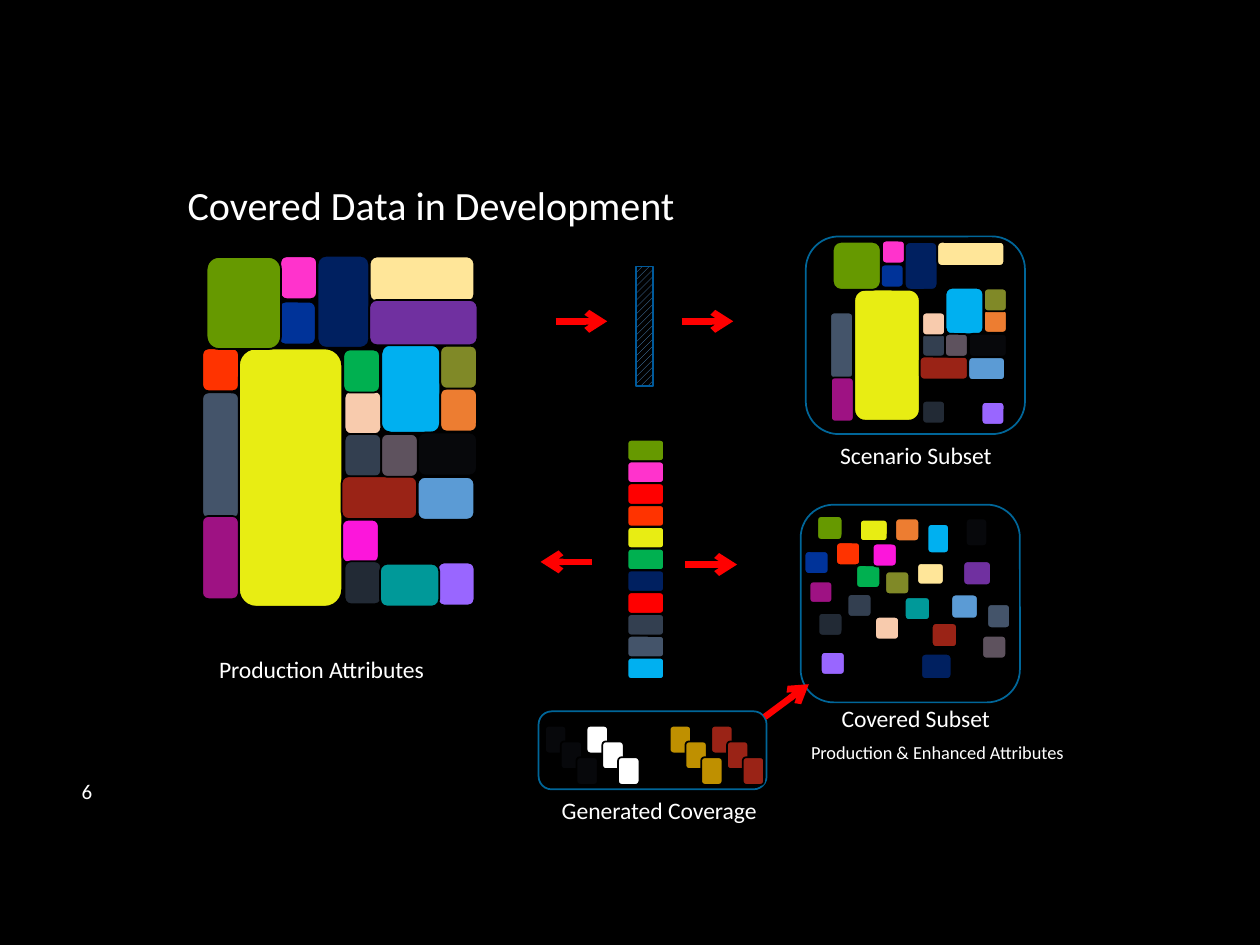
from lxml.etree import SubElement
from pptx import Presentation
from pptx.dml.color import RGBColor
from pptx.enum.dml import MSO_PATTERN_TYPE as Pattern
from pptx.enum.shapes import MSO_CONNECTOR as Connector, MSO_SHAPE as Shape
from pptx.enum.text import MSO_ANCHOR as Anchor, MSO_AUTO_SIZE as AutoSize, PP_ALIGN as Align
from pptx.oxml.ns import qn
from pptx.util import Pt

BLACK, WHITE, RED = "000000", "FFFFFF", "FF0000"
FRAME, HATCH_EDGE = "006699", "005A9B"
STEEL, SLATE, PEACH, NAVY, GREEN = "333F50", "44546A", "F8CBAD", "002060", "00B050"
YELLOW, SCARLET, BLUE, PINK, LIME = "E8ED13", "FF3300", "003399", "FF33CC", "669900"
SKY, CREAM, MAGENTA, AZURE, BRICK = "00B0F0", "FFE699", "FC16DB", "5B9BD5", "9A2316"
INK, MAUVE, ORANGE, OLIVE, PLUM = "07080B", "5E525E", "ED7D31", "808927", "9E1283"
PURPLE, LILAC, COAL, TEAL, GOLD = "7030A0", "9966FF", "222A35", "009999", "BF9000"

# Each tile: colour, left, top, then width and height where they are not the usual ones.
# Tiles stand on end, so width and height are those before the quarter turn.
PRODUCTION_SIZE = (24.5, 20.9)
PRODUCTION = [
    (STEEL, 195.1, 249.8), (SLATE, 90, 249.8, 72, 20.9), (PEACH, 195.1, 225.4),
    (NAVY, 169.9, 157.7, 52.6, 29.5), (GREEN, 194.4, 201.6),
    (YELLOW, 92.2, 243.4, 147.6, 59), (SCARLET, 113.8, 200.9),
    (BLUE, 157.7, 174.2), (PINK, 158.4, 148.3), (LIME, 113, 151.9, 52.6, 42.5),
    (SKY, 209.5, 205.2, 50.4, 33.8), (CREAM, 228.2, 129.6, 25.9, 59.8),
    (MAGENTA, 193.7, 298.8), (AZURE, 242.6, 268.6, 24.5, 32.4),
    (BRICK, 204.5, 262.8, 24.5, 43.2), (INK, 243.4, 242.6, 24.5, 33.8),
    (MAUVE, 216, 249.8), (ORANGE, 249.8, 223.9), (OLIVE, 249.8, 199.4),
    (PLUM, 102.2, 308.2, 47.5, 20.9), (PURPLE, 229, 153.4, 25.9, 61.9),
    (LILAC, 248.4, 323.3), (COAL, 195.1, 322.6), (TEAL, 221.8, 317.5, 24.5, 33.8),
]
SCENARIO_SIZE = (13, 13)
SCENARIO = [
    (STEEL, 527, 190.8), (SLATE, 462.2, 190.8, 37.4, 13), (PEACH, 527, 178.6),
    (NAVY, 512.6, 142.6, 27.4, 18.7), (YELLOW, 469.4, 184.3, 74.9, 37.4),
    (BLUE, 503.3, 151.2), (PINK, 504, 137.5), (LIME, 475.9, 138.2, 27.4, 27.4),
    (SKY, 537.8, 167, 26.6, 21.6), (CREAM, 547.9, 126, 13.7, 38.2),
    (AZURE, 557.3, 200.2, 13, 20.9), (BRICK, 532.8, 196.6, 13, 27.4),
    (INK, 558, 186.5, 13, 21.6), (MAUVE, 540, 190.8), (ORANGE, 562.3, 177.1),
    (OLIVE, 562.3, 164.9), (PLUM, 468.7, 221.8, 25.2, 13),
    (LILAC, 560.9, 229.7), (COAL, 527, 229),
]
COVERED_SIZE = (13, 13.7)
COVERED = [
    (STEEL, 484.6, 339.1), (SLATE, 563.8, 345.6, 13.7, 13), (PEACH, 500.4, 352.1),
    (NAVY, 527.8, 372.2, 14.4, 17.3), (GREEN, 489.6, 322.6),
    (YELLOW, 493.2, 295.2, 12.2, 15.8), (SCARLET, 478.1, 309.6),
    (BLUE, 460.1, 314.6), (LIME, 467.3, 294.5, 13.7, 14.4),
    (SKY, 527.8, 301.7, 16.6, 12.2), (CREAM, 525.6, 320.4, 12.2, 15.1),
    (MAGENTA, 499, 310.3), (AZURE, 544.3, 339.1, 13.7, 15.1),
    (BRICK, 532.8, 355.7, 13.7, 14.4), (INK, 550.1, 298.1, 15.8, 12.2),
    (MAUVE, 561.6, 362.9), (ORANGE, 511.9, 295.9), (OLIVE, 506.2, 326.2),
    (PLUM, 463, 331.9, 12.2, 13), (PURPLE, 551.5, 319.7, 13.7, 15.8),
    (LILAC, 469.4, 372.2), (COAL, 468, 349.9), (TEAL, 517.7, 340.6, 13, 14.4),
]
STACK = [LIME, PINK, RED, SCARLET, YELLOW, GREEN, NAVY, RED, STEEL, SLATE, SKY]
CASCADES = {0: INK, 1: WHITE, 3: GOLD, 4: BRICK}


def rgb(code):
    return RGBColor.from_string(code)


class Painter:
    font = "Calibri"
    text_color = WHITE
    caption_size = 13.5

    def __init__(self, page):
        self.page = page

    def background(self, color):
        fill = self.page.background.fill
        fill.solid()
        fill.fore_color.rgb = rgb(color)

    def block(self, kind, left, top, width, height, edge, turn):
        box = self.page.shapes.add_shape(kind, Pt(left), Pt(top), Pt(width), Pt(height))
        box.rotation = turn
        box.shadow.inherit = False
        box.line.color.rgb = rgb(edge)
        box.line.width = Pt(1)
        return box

    def tile(self, color, left, top, width, height, edge=BLACK, turn=90):
        box = self.block(Shape.ROUNDED_RECTANGLE, left, top, width, height, edge, turn)
        box.fill.solid()
        box.fill.fore_color.rgb = rgb(color)

    def tiles(self, rows, usual_size):
        for color, left, top, *size in rows:
            self.tile(color, left, top, *(size or usual_size))

    def frame(self, left, top, width, height):
        self.tile(BLACK, left, top, width, height, edge=FRAME, turn=270)

    def hatch(self, left, top, width, height):
        box = self.block(Shape.RECTANGLE, left, top, width, height, HATCH_EDGE, 270)
        box.fill.patterned()
        box.fill.pattern = Pattern.WIDE_UPWARD_DIAGONAL
        box.fill.fore_color.rgb = rgb(AZURE)
        box.fill.back_color.rgb = rgb(BLACK)

    def arrow(self, x1, y1, x2, y2):
        """Draw a red line with its arrowhead at the second point."""
        arrow = self.page.shapes.add_connector(
            Connector.STRAIGHT, Pt(x1), Pt(y1), Pt(x2), Pt(y2))
        arrow.line.color.rgb = rgb(RED)
        arrow.line.width = Pt(3.75)
        SubElement(arrow.line._get_or_add_ln(), qn("a:tailEnd"), type="arrow")
        SubElement(arrow._element.spPr, qn("a:effectLst"))

    def text(self, words, left, top, width, height, size=caption_size,
             align=Align.LEFT, anchor=Anchor.TOP, fit=AutoSize.SHAPE_TO_FIT_TEXT):
        box = self.page.shapes.add_textbox(Pt(left), Pt(top), Pt(width), Pt(height))
        frame = box.text_frame
        frame.word_wrap = True
        frame.auto_size = fit
        frame.vertical_anchor = anchor
        para = frame.paragraphs[0]
        para.alignment = align
        span = para.add_run()
        span.text = words
        span.font.name = self.font
        span.font.size = Pt(size)
        span.font.color.rgb = rgb(self.text_color)


def main():
    deck = Presentation()
    deck.slide_width, deck.slide_height = Pt(720), Pt(540)
    painter = Painter(deck.slides.add_slide(deck.slide_layouts[6]))
    painter.background(BLACK)

    painter.tiles(PRODUCTION, PRODUCTION_SIZE)
    painter.text("Production Attributes", 118.1, 370.8, 155.5, 23.8)

    painter.frame(466.6, 128.9, 113, 125.3)
    painter.tiles(SCENARIO, SCENARIO_SIZE)
    painter.hatch(334.1, 181.4, 68.4, 10.1)
    painter.arrow(317.5, 183.6, 347, 183.6)
    painter.arrow(389.5, 183.6, 419, 183.6)
    painter.text("Scenario Subset", 473, 248.4, 155.5, 23.8)

    painter.frame(463.7, 282.2, 113, 125.3)
    for row, color in enumerate(STACK):
        painter.tile(color, 362.9, 247 + 12.45 * row, 12.2, 20.9)
    painter.tiles(COVERED, COVERED_SIZE)
    painter.arrow(338.4, 321.1, 308.9, 321.1)
    painter.arrow(391.7, 322.6, 421.2, 322.6)
    painter.text("Covered Subset", 473.8, 398.9, 155.5, 23.8)
    painter.text("Production & Enhanced Attributes", 445.7, 419.8, 180, 20.2,
                 size=10.5, align=Align.CENTER)

    painter.frame(350.6, 363.6, 44.6, 130.3)
    for column, color in CASCADES.items():
        for step in range(3):
            painter.tile(color, 309.6 + 23.75 * column + 9 * step, 416.5 + 9 * step, 15.8, 12.2)
    painter.text("Generated Coverage", 313.9, 451.4, 133.2, 23.8)
    painter.arrow(437, 409.7, 462.2, 391)

    painter.text("Covered Data in Development", 100.1, 99.4, 297.4, 40.3,
                 size=22.9, fit=AutoSize.NONE)
    painter.text("6", 0, 441.4, 59.8, 21.6, size=12, align=Align.RIGHT,
                 anchor=Anchor.MIDDLE, fit=AutoSize.NONE)
    deck.save("out.pptx")


if __name__ == "__main__":
    main()
